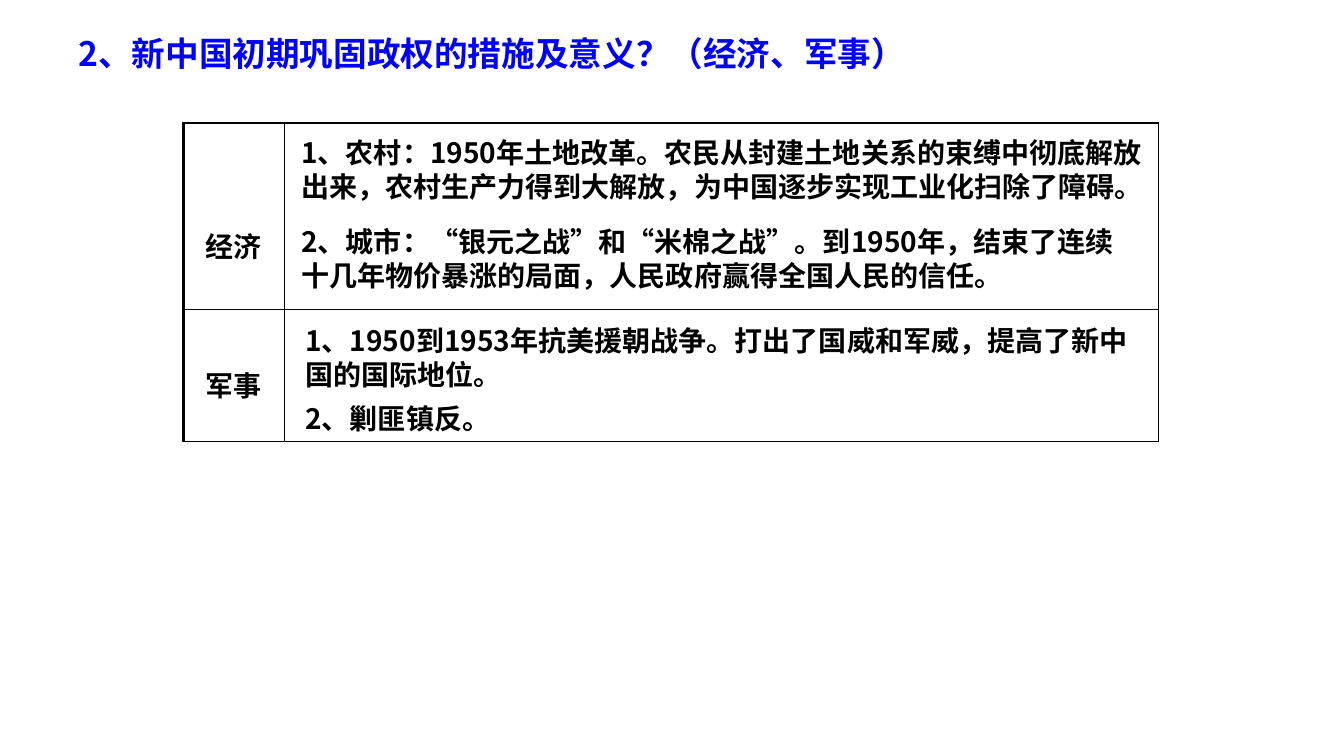
import lxml.etree
import pptx
import pptx.dml.color
import pptx.enum.lang
import pptx.enum.text
import pptx.oxml.ns
import pptx.util

Inches = pptx.util.Inches
Pt = pptx.util.Pt
qn = pptx.oxml.ns.qn

BLUE = pptx.dml.color.RGBColor(0x00, 0x00, 0xFF)
BLACK = pptx.dml.color.RGBColor(0x00, 0x00, 0x00)
BODY_FONT = "Noto Sans CJK JP"
LABEL_FONT = "Noto Sans CJK SC"

TITLE = "2、新中国初期巩固政权的措施及意义？（经济、军事）"
MEASURES = [
    (2.89, 1.3, 8.65, 0.77, "1、农村：1950年土地改革。农民从封建土地关系的束缚中彻底解放出来，农村生产力得到大解放，为中国逐步实现工业化扫除了障碍。"),
    (2.89, 2.18, 8.51, 0.77, "2、城市：“银元之战”和“米棉之战”。到1950年，结束了连续十几年物价暴涨的局面，人民政府赢得全国人民的信任。"),
    (2.93, 3.16, 8.43, 0.77, "1、1950到1953年抗美援朝战争。打出了国威和军威，提高了新中国的国际地位。"),
    (2.93, 3.93, 7.81, 0.44, "2、剿匪镇反。"),
]
COLUMNS = [1, 8.67]
ROWS = [("经济", 1.85, 1.01), ("军事", 1.31, 0.54)]


def write(tf, text, size=20, color=BLACK, font=BODY_FONT, align=None):
    p = tf.paragraphs[0]
    p.alignment = align
    r = p.add_run()
    r.text = text
    r.font.size = Pt(size)
    r.font.bold = True
    r.font.color.rgb = color
    r.font.name = font
    r.font.language_id = pptx.enum.lang.MSO_LANGUAGE_ID.SIMPLIFIED_CHINESE
    latin = r.font._element.find(qn("a:latin"))
    latin.addnext(latin.makeelement(qn("a:ea"), {"typeface": font}))


class Deck:
    """Holds the presentation, its current slide and the element styles."""

    def __init__(self):
        self.prs = pptx.Presentation()
        self.prs.slide_width = Inches(13.33)
        self.prs.slide_height = Inches(7.5)
        self.s = self.prs.slides.add_slide(self.prs.slide_layouts[6])

    def text(self, x, y, w, h, text, **style):
        sp = self.s.shapes.add_textbox(Inches(x), Inches(y), Inches(w), Inches(h))
        tf = sp.text_frame
        tf.word_wrap = True
        write(tf, text, **style)

    def borders(self, cell, left=1):
        props = cell._tc.get_or_add_tcPr()
        for i, (side, width) in enumerate(zip("LRTB", (left, 1, 1, 1))):
            ln = props.makeelement(qn("a:ln" + side), {"w": str(Pt(width))})
            fill = lxml.etree.SubElement(ln, qn("a:solidFill"))
            lxml.etree.SubElement(fill, qn("a:srgbClr"), val=str(BLACK))
            props.insert(i, ln)

    def table(self, x, y, columns, rows):
        height = sum(row[1] for row in rows)
        table = self.s.shapes.add_table(
            len(rows), len(columns), Inches(x), Inches(y),
            Inches(sum(columns)), Inches(height)).table
        table.first_row = table.horz_banding = False
        for column, width in zip(table.columns, columns):
            column.width = Inches(width)
        for i, (label, height, offset) in enumerate(rows):
            table.rows[i].height = Inches(height)
            for j in range(len(columns)):
                cell = table.cell(i, j)
                cell.fill.background()
                self.borders(cell, left=1 if j else 2.25)
            cell = table.cell(i, 0)
            cell.margin_top = Inches(offset)
            write(cell.text_frame, label, font=LABEL_FONT,
                  align=pptx.enum.text.PP_ALIGN.CENTER)


def main():
    deck = Deck()
    deck.table(1.82, 1.22, COLUMNS, ROWS)
    deck.text(0.68, 0.28, 12.14, 0.5, TITLE, size=24, color=BLUE)
    for measure in MEASURES:
        deck.text(*measure)
    deck.prs.save("out.pptx")


if __name__ == "__main__":
    main()
